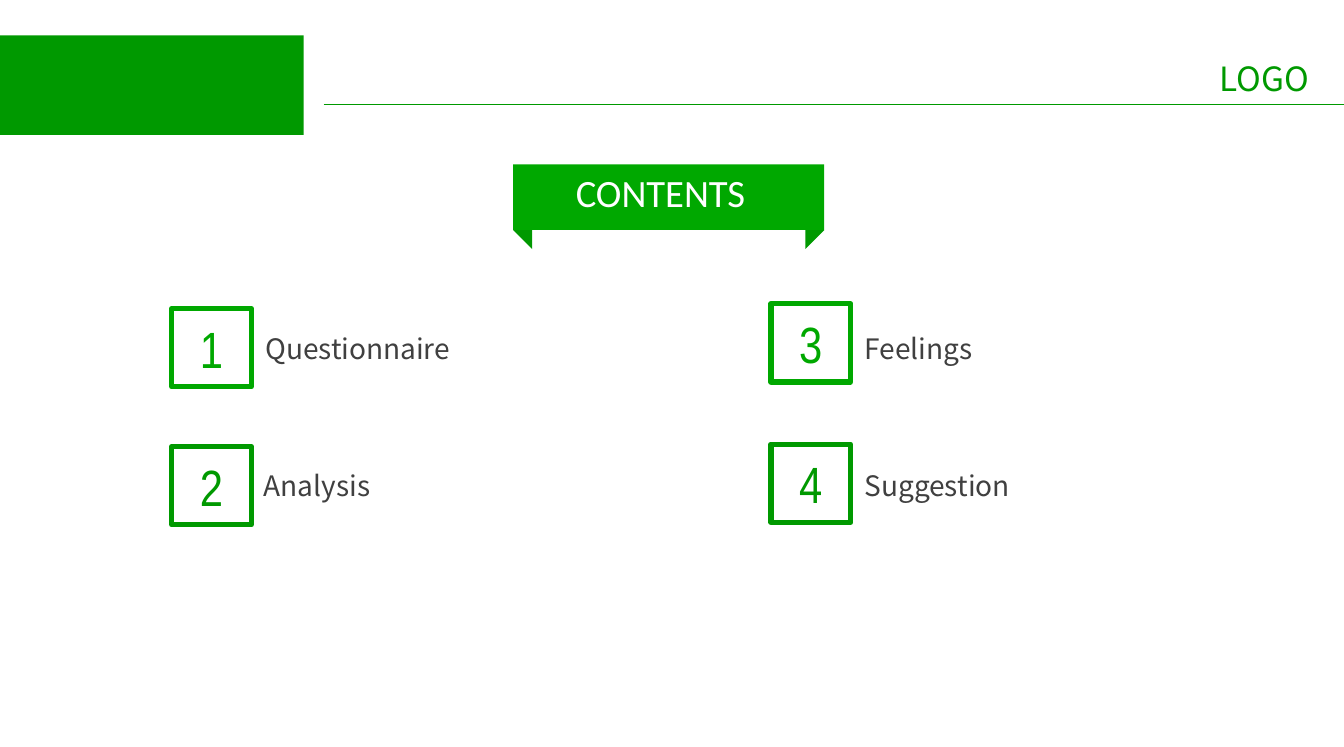
import pptx
import pptx.util
import pptx.dml.color
import pptx.enum.shapes
import pptx.enum.text

Cm = pptx.util.Cm
Pt = pptx.util.Pt
MSO_SHAPE = pptx.enum.shapes.MSO_SHAPE
PP_ALIGN = pptx.enum.text.PP_ALIGN

GREEN = "009900"
BRIGHT_GREEN = "00A800"


def rgb(color):
    return pptx.dml.color.RGBColor.from_string(color)


def write(shape, text, size, font, color, align=PP_ALIGN.LEFT, inset=0.2):
    """Put one unwrapped line of text in a shape or text box."""
    frame = shape.text_frame
    frame.word_wrap = False
    frame.margin_left = frame.margin_right = Cm(inset)
    frame.margin_top = frame.margin_bottom = Cm(inset / 2)
    paragraph = frame.paragraphs[0]
    paragraph.text = text
    paragraph.alignment = align
    paragraph.font.size = Pt(size)
    paragraph.font.name = font
    paragraph.font.color.rgb = rgb(color)


presentation = pptx.Presentation()
presentation.slide_width = Cm(27)
presentation.slide_height = Cm(15)
slide = presentation.slides.add_slide(presentation.slide_layouts[6])
shapes = slide.shapes

# Header rule and logo text
rule = shapes.add_connector(
    pptx.enum.shapes.MSO_CONNECTOR.STRAIGHT, Cm(6.5), Cm(2.1), Cm(27), Cm(2.1))
rule.line.color.rgb = rgb(GREEN)
rule.line.width = Pt(0.75)
rule_properties = rule.element.spPr
rule_properties.append(pptx.oxml.parse_xml(
    '<a:effectLst xmlns:a="http://schemas.openxmlformats.org/drawingml/2006/main"/>'))
logo = shapes.add_textbox(Cm(24.25), Cm(1.04), Cm(2.44), Cm(1.07))
write(logo, "LOGO", 19, "Noto Sans CJK SC", GREEN, inset=0.25)

# Header block, ribbon folds and ribbon
for kind, left, top, width, height, rotation, color in [
    (MSO_SHAPE.RECTANGLE, 0, 0.71, 6.1, 2, 0, GREEN),
    (MSO_SHAPE.RIGHT_TRIANGLE, 10.31, 4.62, 0.38, 0.38, 180, GREEN),
    (MSO_SHAPE.RIGHT_TRIANGLE, 16.18, 4.62, 0.38, 0.38, 90, GREEN),
    (MSO_SHAPE.RECTANGLE, 10.31, 3.3, 6.25, 1.32, 0, BRIGHT_GREEN),
]:
    shape = shapes.add_shape(kind, Cm(left), Cm(top), Cm(width), Cm(height))
    shape.rotation = rotation
    shape.shadow.inherit = False
    shape.fill.solid()
    shape.fill.fore_color.rgb = rgb(color)
    shape.line.fill.background()

title = shapes.add_textbox(Cm(11.35), Cm(3.3), Cm(3.84), Cm(1.14))
write(title, "CONTENTS", 22, "Calibri", "FFFFFF", PP_ALIGN.CENTER)

# Numbered entries: two columns of two
for number, label, left, top, label_left, label_top, label_width, color in [
    ("1", "Questionnaire", 3.45, 6.2, 5.13, 6.55, 4.24, BRIGHT_GREEN),
    ("2", "Analysis", 3.45, 8.97, 5.1, 9.3, 2.62, GREEN),
    ("3", "Feelings", 15.49, 6.1, 17.17, 6.55, 2.64, BRIGHT_GREEN),
    ("4", "Suggestion", 15.49, 8.92, 17.17, 9.3, 3.48, GREEN),
]:
    square = shapes.add_shape(
        MSO_SHAPE.RECTANGLE, Cm(left), Cm(top), Cm(1.6), Cm(1.57))
    square.shadow.inherit = False
    square.fill.background()
    square.line.color.rgb = rgb(color)
    square.line.width = Pt(3)
    square.text_frame.vertical_anchor = pptx.enum.text.MSO_ANCHOR.MIDDLE
    write(square, number, 29, "Arial Narrow", color, PP_ALIGN.CENTER)
    entry = shapes.add_textbox(
        Cm(label_left), Cm(label_top), Cm(label_width), Cm(0.89))
    write(entry, label, 16, "Noto Sans CJK SC", "404040")

presentation.save("out.pptx")
